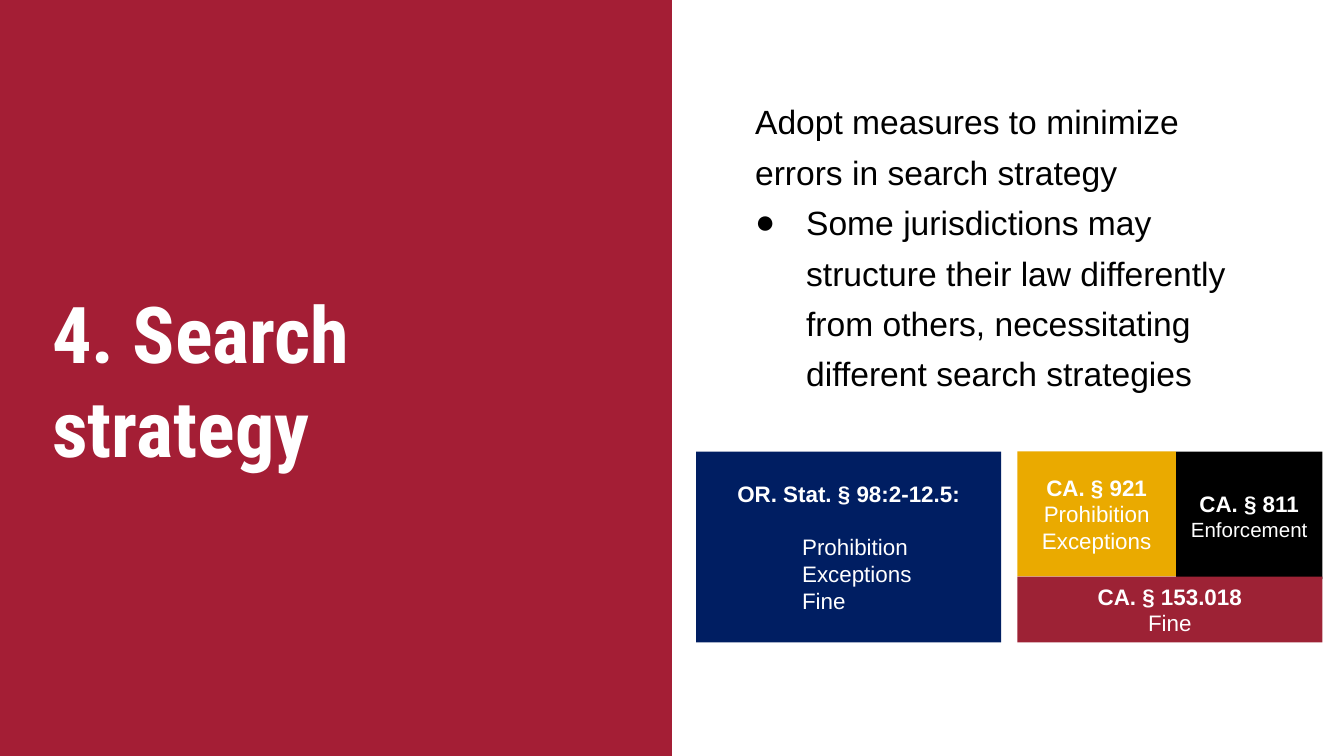
import dataclasses

import pptx
import pptx.dml.color
import pptx.enum.shapes
import pptx.enum.text
import pptx.oxml.ns
import pptx.util
from lxml import etree

Inches = pptx.util.Inches
Pt = pptx.util.Pt
Align = pptx.enum.text.PP_ALIGN
Anchor = pptx.enum.text.MSO_ANCHOR


@dataclasses.dataclass(frozen=True)
class Theme:
    panel: str = "A41E35"
    navy: str = "001E62"
    gold: str = "EAAA00"
    black: str = "000000"
    crimson: str = "9D2235"
    white: str = "FFFFFF"
    title_font: str = "Roboto Condensed"
    body_font: str = "Arial"
    title_size: int = 42
    body_size: int = 18
    box_size: int = 12
    small_size: int = 11


def rgb(code):
    return pptx.dml.color.RGBColor.from_string(code)


def apply(target, values):
    for name, value in values.items():
        setattr(target, name, value)


class SlideBuilder:
    def __init__(self, slide, theme):
        self.slide = slide
        self.theme = theme

    def paragraph(self, frame, index, text, font, color, layout, indent=(0, 0), bullet=None):
        paragraph = frame.paragraphs[0] if index == 0 else frame.add_paragraph()
        apply(paragraph, layout)
        properties = paragraph._p.get_or_add_pPr()
        for name, length in zip(("marL", "indent"), indent):
            properties.set(name, str(Inches(length)))
        if bullet:
            for tag, name, value in (("a:buFont", "typeface", font["name"]),
                                     ("a:buChar", "char", bullet)):
                etree.SubElement(properties, pptx.oxml.ns.qn(tag)).set(name, value)
        run = paragraph.add_run()
        run.text = text
        apply(run.font, font)
        run.font.color.rgb = rgb(color)

    def rectangle(self, place, fill):
        shape = self.slide.shapes.add_shape(
            pptx.enum.shapes.MSO_SHAPE.RECTANGLE, *map(Inches, place))
        shape.shadow.inherit = False
        shape.fill.solid()
        shape.fill.fore_color.rgb = rgb(fill)
        shape.line.fill.background()
        return shape

    def text(self, place, anchor, paragraphs, font, color):
        frame = self.slide.shapes.add_textbox(*map(Inches, place)).text_frame
        inset = Inches(0.1)
        apply(frame, {"word_wrap": True, "vertical_anchor": anchor,
                      "margin_left": inset, "margin_right": inset,
                      "margin_top": inset, "margin_bottom": inset})
        for index, options in enumerate(paragraphs):
            self.paragraph(frame, index, font=font, color=color, **options)

    def statute(self, place, fill, heading, provisions, size=None, indent=None, gap=0):
        frame = self.rectangle(place, fill).text_frame
        apply(frame, {"word_wrap": True, "vertical_anchor": Anchor.MIDDLE})
        font = {"name": self.theme.body_font, "size": Pt(self.theme.box_size), "bold": True}
        self.paragraph(frame, 0, heading, font, self.theme.white,
                       {"alignment": Align.CENTER, "space_after": Pt(gap)})
        font = font | {"size": Pt(size or self.theme.box_size), "bold": False}
        alignment = Align.LEFT if indent else Align.CENTER
        for index, provision in enumerate(provisions, 1):
            self.paragraph(frame, index, provision, font, self.theme.white,
                           {"alignment": alignment}, (indent or 0, 0))


def main():
    theme = Theme()
    deck = pptx.Presentation()
    slide_width = Inches(10)
    apply(deck, {"slide_width": slide_width, "slide_height": slide_width * 9 // 16})
    builder = SlideBuilder(deck.slides.add_slide(deck.slide_layouts[6]), theme)

    builder.rectangle((-0.05, -0.03, 5.05, 5.7), theme.panel)
    builder.text((0.29, 2, 4.42, 1.62), Anchor.BOTTOM,
                 [{"text": "4. Search strategy", "layout": {}}],
                 {"name": theme.title_font, "size": Pt(theme.title_size), "bold": True},
                 theme.white)

    spacing = {"line_spacing": 1.25}
    builder.text((5.4, 0.58, 4.15, 4.46), Anchor.TOP, [
        {"text": "Adopt measures to minimize errors in search strategy",
         "layout": spacing, "indent": (0.12, 0)},
        {"text": "Some jurisdictions may structure their law differently from others, "
                 "necessitating different search strategies",
         "layout": spacing, "indent": (0.5, -0.38), "bullet": "●"},
    ], {"name": theme.body_font, "size": Pt(theme.body_size)}, theme.black)

    top, width, height = 3.36, 2.27, 1.42
    oregon_left, california_left = 5.18, 7.57
    prohibition_width, upper_height = 1.18, 0.93
    builder.statute((oregon_left, top, width, height), theme.navy, "OR. Stat. § 98:2-12.5:",
                    ["Prohibition", "Exceptions", "Fine"], indent=0.69, gap=14)
    builder.statute((california_left, top, prohibition_width, upper_height), theme.gold,
                    "CA. § 921", ["Prohibition", "Exceptions"])
    builder.statute((california_left + prohibition_width, top,
                     width - prohibition_width, upper_height + 0.02), theme.black,
                    "CA. § 811", ["Enforcement"], size=theme.small_size)
    builder.statute((california_left, top + upper_height, width, height - upper_height),
                    theme.crimson, "CA. § 153.018", ["Fine"])

    deck.save("out.pptx")


if __name__ == "__main__":
    main()
